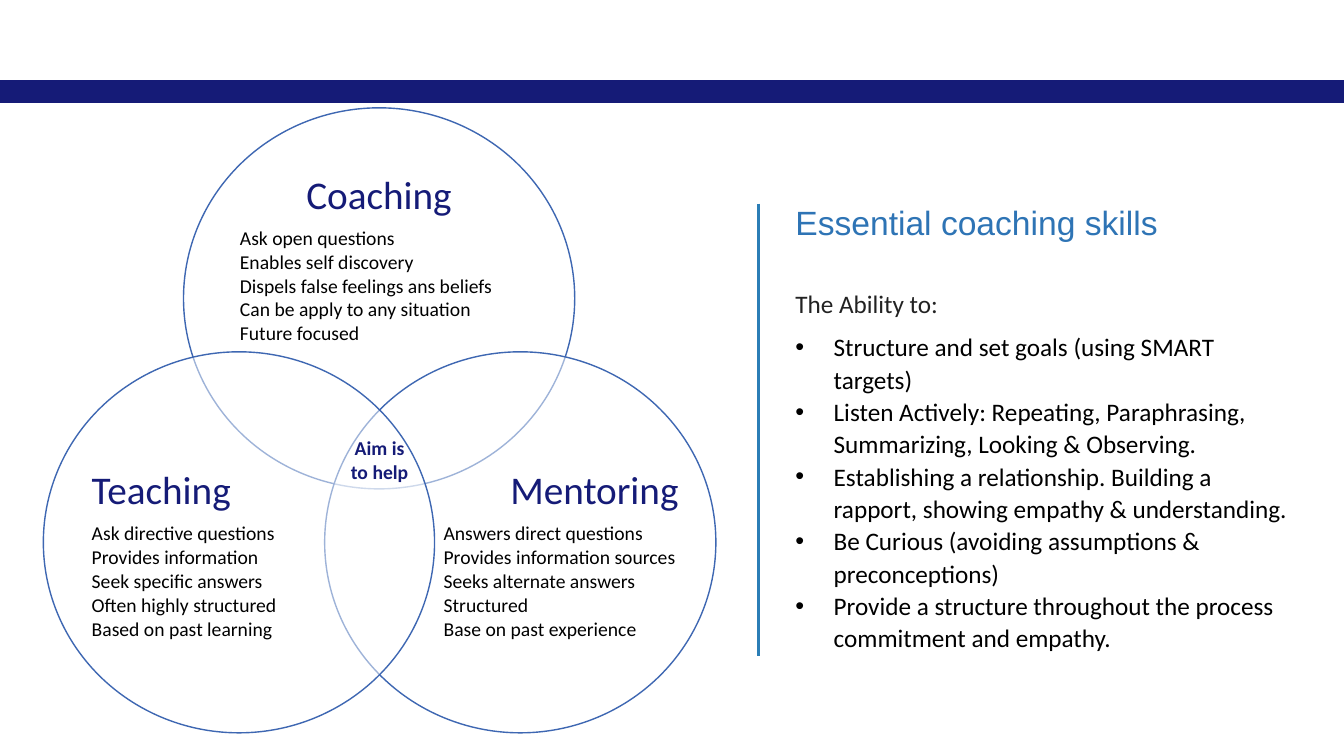
from pptx import Presentation
from pptx.dml.color import RGBColor
from pptx.enum.shapes import MSO_CONNECTOR, MSO_SHAPE
from pptx.enum.text import MSO_ANCHOR, PP_ALIGN
from pptx.oxml.ns import qn
from pptx.util import Inches, Pt
from lxml.etree import SubElement

THEME = dict(
    navy="151B77", outline="3E67B2", heading="2E74B5", rule="2B7EB6",
    white="FFFFFF", black="000000", dark="222222",
    body_font="Calibri", heading_font="Arial",
    circle_title=28, circle_item=14, heading_size=24, body_size=18,
)

# title, title alignment, circle (left, top), text box (left, top, width, height), items
CIRCLES = [
    ("Coaching", PP_ALIGN.CENTER, (1.82, 1.07), (2.38, 1.73, 2.76, 1.7),
     ["Ask open questions", "Enables self discovery", "Dispels false feelings ans beliefs",
      "Can be apply to any situation", "Future focused"]),
    ("Mentoring", PP_ALIGN.RIGHT, (3.22, 3.49), (4.4, 4.47, 2.33, 2.08),
     ["Answers direct questions", "Provides information sources", "Seeks alternate answers",
      "Structured", "Base on past experience"]),
    ("Teaching", PP_ALIGN.LEFT, (0.43, 3.49), (0.91, 4.47, 2.21, 2.08),
     ["Ask directive questions", "Provides information", "Seek specific answers",
      "Often highly structured", "Based on past learning"]),
]
CIRCLE_SIZE = (3.88, 3.78)
CENTRE_TEXT = "Aim is to help"
SKILLS_HEADING = "Essential coaching skills"
SKILLS_INTRO = "The Ability to:"
SKILLS = [
    "Structure and set goals (using SMART targets)",
    "Listen Actively: Repeating, Paraphrasing, Summarizing, Looking & Observing.",
    "Establishing a relationship. Building a rapport, showing empathy & understanding.",
    "Be Curious (avoiding assumptions & preconceptions)",
    "Provide a structure throughout the process commitment and empathy.",
]


def rgb(name):
    return RGBColor.from_string(THEME[name])


def add_shape(slide, kind, box, fill, line, alpha=None):
    s = slide.shapes.add_shape(kind, *map(Inches, box))
    s.shadow.inherit = False
    s.fill.solid()
    s.fill.fore_color.rgb = rgb(fill)
    s.line.color.rgb = rgb(line)
    s.line.width = Pt(1)
    if alpha is not None:
        color = s.fill._xPr.find(qn("a:solidFill"))[0]
        SubElement(color, qn("a:alpha"), val=str(alpha * 1000))
    return s


def add_text_box(slide, box, inset=None, anchor=MSO_ANCHOR.TOP):
    tf = slide.shapes.add_textbox(*map(Inches, box)).text_frame
    tf.word_wrap = True
    tf.vertical_anchor = anchor
    if inset is not None:
        tf.margin_left = tf.margin_right = tf.margin_top = tf.margin_bottom = Inches(inset)
    return tf


def add_text(tf, text, size="body_size", color="black", font="body_font", bold=False,
             align=PP_ALIGN.LEFT, spacing=1.0, after=0, bullet=False):
    """Fill the empty first paragraph of the frame, or append one."""
    first = tf.paragraphs[0]
    p = tf.add_paragraph() if first.runs else first
    p.alignment, p.line_spacing, p.space_after = align, spacing, Pt(after)
    if bullet:
        pPr = p._p.get_or_add_pPr()
        pPr.set("marL", str(Inches(0.38)))
        pPr.set("indent", str(Inches(-0.38)))
        SubElement(pPr, qn("a:buFont"), typeface="Arial")
        SubElement(pPr, qn("a:buChar"), char="•")
    r = p.add_run()
    r.text = text
    r.font.name, r.font.size = THEME[font], Pt(THEME[size])
    r.font.bold, r.font.color.rgb = bold, rgb(color)


def add_circle(slide, title, align, corner, text_box, items):
    add_shape(slide, MSO_SHAPE.OVAL, corner + CIRCLE_SIZE, "white", "outline", alpha=50)
    tf = add_text_box(slide, text_box, inset=0, anchor=MSO_ANCHOR.MIDDLE)
    add_text(tf, title, size="circle_title", color="navy", align=align, spacing=0.9, after=8)
    for item in items:
        add_text(tf, item, size="circle_item", spacing=0.9, after=1.85)


def add_skills(slide):
    tf = add_text_box(slide, (7.79, 1.89, 5.15, 4.66))
    add_text(tf, SKILLS_HEADING, size="heading_size", color="heading", font="heading_font",
             spacing=1.15, after=31.5)
    add_text(tf, SKILLS_INTRO, color="dark", spacing=1.07, after=8)
    for skill in SKILLS:
        add_text(tf, skill, spacing=1.07, bullet=True)


def add_divider(slide):
    x = Inches(7.52)
    s = slide.shapes.add_connector(MSO_CONNECTOR.STRAIGHT, x, Inches(2.02), x, Inches(6.51))
    s.line.color.rgb = rgb("rule")
    s.line.width = Pt(2.25)
    SubElement(s._element.spPr, qn("a:effectLst"))


def main():
    prs = Presentation()
    prs.slide_width, prs.slide_height = Inches(13.33), Inches(7.5)
    slide = prs.slides.add_slide(prs.slide_layouts[6])
    add_shape(slide, MSO_SHAPE.RECTANGLE, (0, 0.8, 13.33, 0.22), "navy", "navy")
    for circle in CIRCLES:
        add_circle(slide, *circle)
    centre = add_text_box(slide, (3.37, 4.28, 0.79, 0.57))
    add_text(centre, CENTRE_TEXT, size="circle_item", color="navy", bold=True,
             align=PP_ALIGN.CENTER)
    add_skills(slide)
    add_divider(slide)
    prs.save("out.pptx")


if __name__ == "__main__":
    main()
